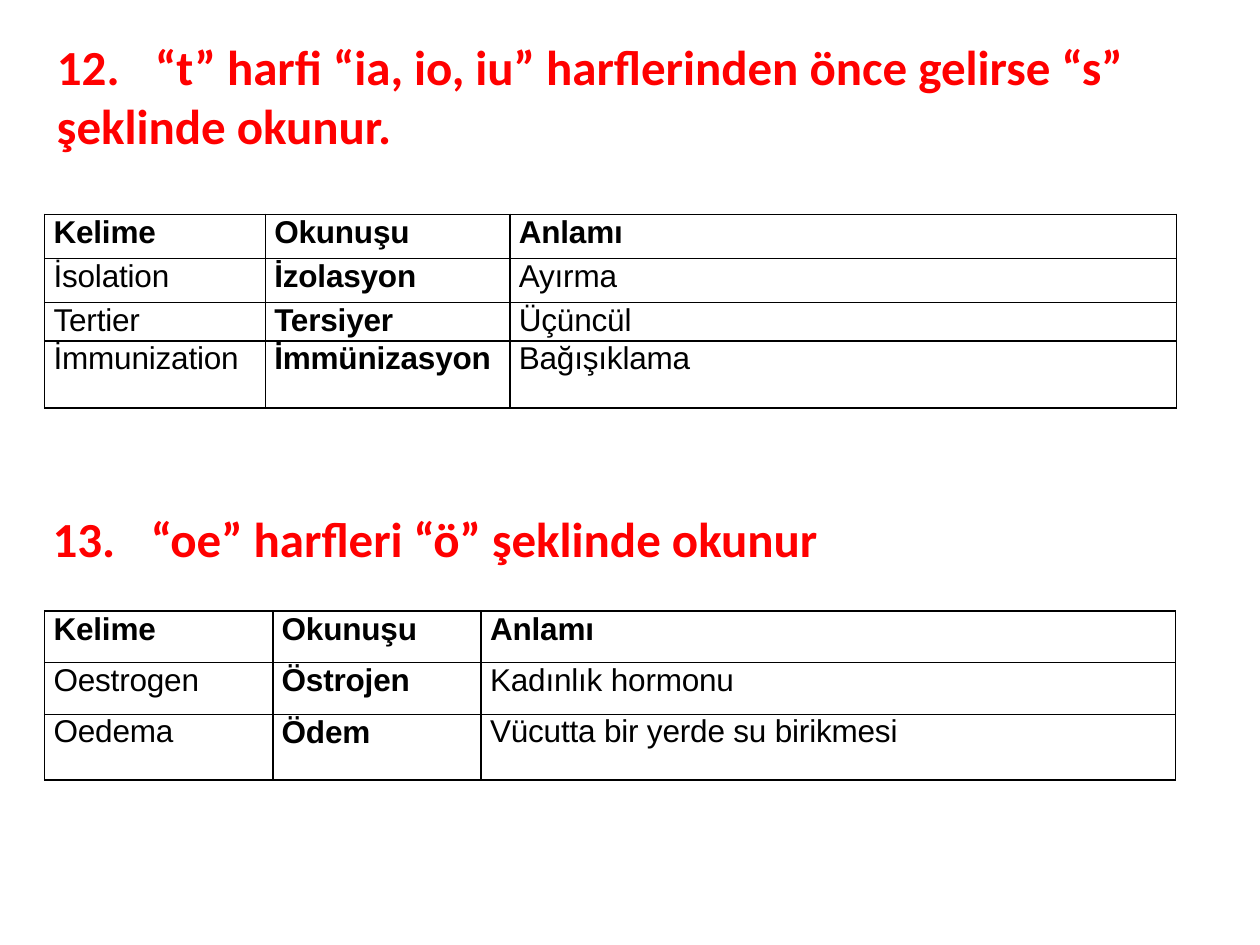
from lxml import etree
from pptx import Presentation
from pptx.dml.color import RGBColor
from pptx.enum.text import MSO_ANCHOR
from pptx.oxml.ns import qn
from pptx.util import Cm, Pt

MIDDLE = MSO_ANCHOR.MIDDLE
TOP = MSO_ANCHOR.TOP
COLORS = {"heading": "FF0000", "text": "000000", "border": "000000"}
READING_COLUMN = 1
HEADER = ("Kelime", "Okunuşu", "Anlamı")
T_WORDS = (
    HEADER,
    ("İsolation", "İzolasyon", "Ayırma"),
    ("Tertier", "Tersiyer", "Üçüncül"),
    ("İmmunization", "İmmünizasyon", "Bağışıklama"),
)
OE_WORDS = (
    HEADER,
    ("Oestrogen", "Östrojen", "Kadınlık hormonu"),
    ("Oedema", "Ödem", "Vücutta bir yerde su birikmesi"),
)


def format_run(run, font_name, size, color, bold):
    """Set the font of one run."""
    run.font.name = font_name
    run.font.size = Pt(size)
    run.font.bold = bold
    run.font.color.rgb = RGBColor.from_string(COLORS[color])


def add_rule(slide, number, rule, left, top, height, anchor):
    """Add a numbered red heading whose rule starts at a tab stop."""
    shape = slide.shapes.add_textbox(Cm(left), Cm(top), Cm(23.4), Cm(height))
    text_frame = shape.text_frame
    text_frame.word_wrap = True
    text_frame.vertical_anchor = anchor
    paragraph = text_frame.paragraphs[0]
    paragraph.text = f"{number}.\t{rule}"
    tab_list = etree.SubElement(paragraph._p.get_or_add_pPr(), qn("a:tabLst"))
    etree.SubElement(tab_list, qn("a:tab"), pos=str(Cm(1.98)), algn="l")
    for run in paragraph.runs:
        format_run(run, "Calibri", 28, "heading", True)


def add_borders(cell):
    """Draw a thin line on all four sides of a cell."""
    properties = cell._tc.get_or_add_tcPr()
    for index, side in enumerate(("lnL", "lnR", "lnT", "lnB")):
        line = etree.Element(qn(f"a:{side}"), w=str(Pt(1)))
        fill = etree.SubElement(line, qn("a:solidFill"))
        etree.SubElement(fill, qn("a:srgbClr"), val=COLORS["border"])
        properties.insert(index, line)


def fill_cell(cell, text, bold):
    """Write and format one table cell."""
    cell.margin_left = Cm(0.18)
    cell.margin_right = cell.margin_top = cell.margin_bottom = 0
    cell.fill.background()
    add_borders(cell)
    paragraph = cell.text_frame.paragraphs[0]
    paragraph.text = text
    paragraph.line_spacing = 1.01 if bold else 1.0
    for run in paragraph.runs:
        format_run(run, "Arial", 18, "text", bold)
        run._r.get_or_add_rPr().set("spc", "-10")


def add_word_table(slide, words, top, widths, heights):
    """Add a bordered word table with a bold header and reading column."""
    frame = slide.shapes.add_table(
        len(words), len(widths), Cm(0.9), Cm(top), Cm(sum(widths)), Cm(sum(heights))
    )
    table = frame.table
    table.first_row = False
    table.horz_banding = False
    for column, width in zip(table.columns, widths):
        column.width = Cm(width)
    for row_index, (row, height) in enumerate(zip(table.rows, heights)):
        row.height = Cm(height)
        for column_index, text in enumerate(words[row_index]):
            bold = row_index == 0 or column_index == READING_COLUMN
            fill_cell(row.cells[column_index], text, bold)


def main():
    """Build the slide and save it."""
    presentation = Presentation()
    presentation.slide_width = Cm(25.4)
    presentation.slide_height = Cm(19.05)
    slide = presentation.slides.add_slide(presentation.slide_layouts[6])
    add_rule(
        slide, 12, "“t” harfi “ia, io, iu” harflerinden önce gelirse “s” şeklinde okunur.",
        0.9, 0.91, 2.03, MIDDLE,
    )
    add_word_table(slide, T_WORDS, 4.32, (4.45, 4.93, 13.44), (0.89, 0.89, 0.69, 1.35))
    add_rule(slide, 13, "“oe” harfleri “ö” şeklinde okunur", 0.81, 10.13, 1.45, TOP)
    add_word_table(slide, OE_WORDS, 12.32, (4.6, 4.2, 14), (1.04, 1.04, 1.32))
    presentation.save("out.pptx")


if __name__ == "__main__":
    main()
